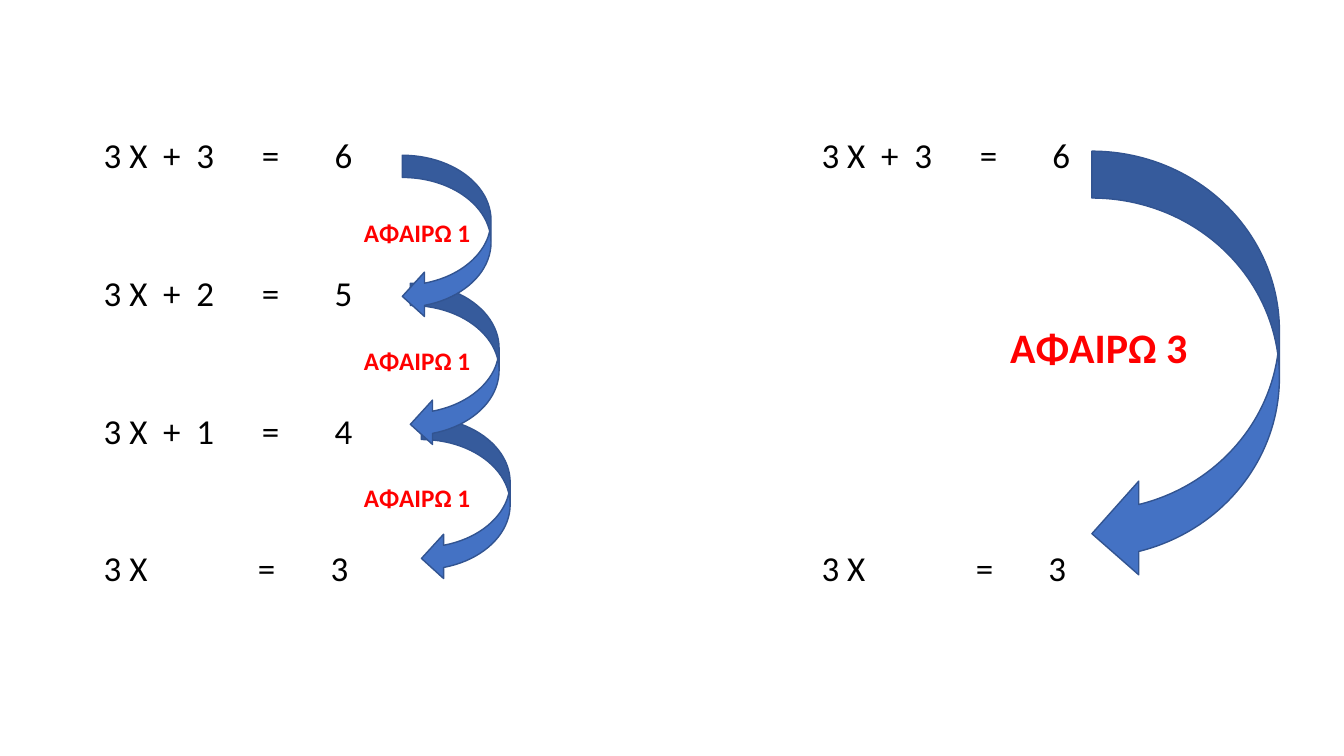
from lxml import etree
from pptx import Presentation
from pptx.dml.color import RGBColor
from pptx.enum.shapes import MSO_SHAPE
from pptx.enum.text import MSO_AUTO_SIZE
from pptx.oxml.ns import qn
from pptx.util import Inches, Pt

ARROW = MSO_SHAPE.CURVED_LEFT_ARROW
GROW = MSO_AUTO_SIZE.SHAPE_TO_FIT_TEXT
HUES = {"ink": "000000", "red": "FF0000", "blue": "4472C4", "edge": "325491"}

deck = Presentation()
deck.slide_width, deck.slide_height = Inches(13.33), Inches(7.5)
slide = deck.slides.add_slide(deck.slide_layouts[6])

# Grid: two columns of equations, four rows
COLS = [0.93, 8.05]
TOP, STEP = 1.28, 1.365
FULL = [0.59, 0.92, 1.57, 2.29]
LAST = [1.53, 2.25]
rows = [(["3 Χ", "+", "3", "=", "6"], FULL),
        (["3 Χ", "+", "2", "=", "5"], FULL),
        (["3 Χ", "+", "1", "=", "4"], FULL),
        (["3 Χ", "=", "3"], LAST)]


def add_text(text, box, size, hue, bold=False, wrap=True):
    frame = slide.shapes.add_textbox(*map(Inches, box)).text_frame
    frame.word_wrap = wrap
    frame.auto_size = GROW
    para = frame.paragraphs[0]
    para.text = text
    para.font.name, para.font.size, para.font.bold = "Calibri", Pt(size), bold
    para.font.color.rgb = RGBColor.from_string(HUES[hue])
    return para


def add_arrow(*box):
    arrow = slide.shapes.add_shape(ARROW, *map(Inches, box))
    arrow.shadow.inherit = False
    arrow.fill.solid()
    arrow.fill.fore_color.rgb = RGBColor.from_string(HUES["blue"])
    arrow.line.color.rgb = RGBColor.from_string(HUES["edge"])
    arrow.line.width = Pt(1)


# Equations: all four steps on the left, first and last on the right
for left, shown in zip(COLS, [(0, 1, 2, 3), (0, 3)]):
    for row in shown:
        terms, stops = rows[row]
        box = (left, TOP + row * STEP, 4.43, 0.52)
        para = add_text("\t".join(terms), box, 25, "ink")
        # Tab stops line up the terms
        tabs = etree.Element(qn("a:tabLst"))
        for stop in stops:
            etree.SubElement(tabs, qn("a:tab"), pos=str(Inches(stop)), algn="l")
        para._p.get_or_add_pPr().insert(0, tabs)

# Small steps: lowest arrow at the back
for left, top in [(4.18, 4.14), (4.07, 2.81), (3.99, 1.54)]:
    add_arrow(left, top, 0.88, 1.62)
for top in (2.11, 3.38, 4.74):
    add_text("ΑΦΑΙΡΩ 1", (3.51, top, 1.27, 0.4), 18, "red", True, False)

# One big step
add_arrow(10.83, 1.5, 1.86, 4.26)
add_text("ΑΦΑΙΡΩ 3", (9.92, 3.14, 1.98, 0.61), 30, "red", True, False)

deck.save("out.pptx")
